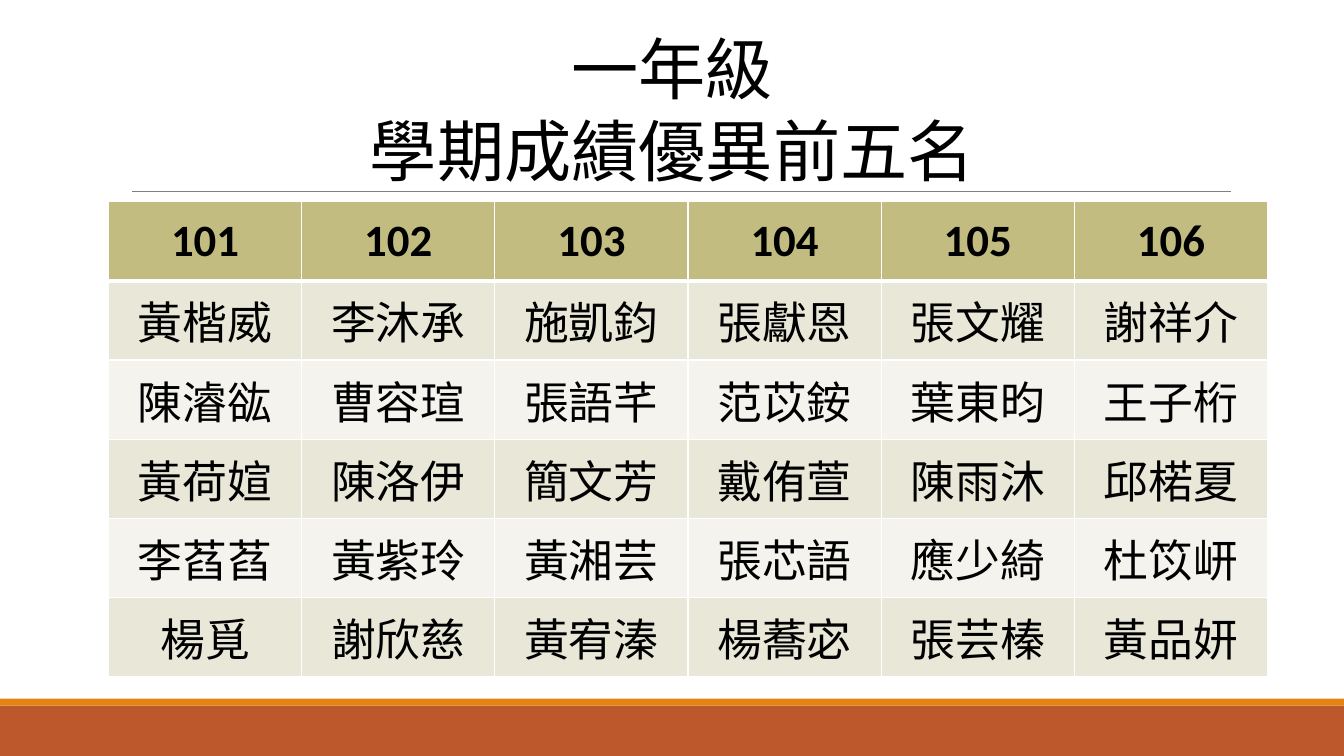
from pptx import Presentation
from pptx.dml.color import RGBColor
from pptx.enum.shapes import MSO_CONNECTOR as CONN, MSO_SHAPE as SHAPE
from pptx.enum.text import MSO_ANCHOR as ANCHOR, PP_ALIGN as ALIGN
from pptx.oxml.ns import qn
from pptx.util import Pt
from lxml.etree import SubElement

W, H = 960, 540
LATIN, CJK_JP, CJK_SC = "Calibri", "Noto Sans CJK JP", "Noto Sans CJK SC"

TITLE = ["一年級", "學期成績優異前五名"]
ROWS = [
    ["101", "102", "103", "104", "105", "106"],
    ["黃楷威", "李沐承", "施凱鈞", "張獻恩", "張文耀", "謝祥介"],
    ["陳濬谹", "曹容瑄", "張語芊", "范苡銨", "葉東昀", "王子桁"],
    ["黃荷媗", "陳洛伊", "簡文芳", "戴侑萱", "陳雨沐", "邱楉夏"],
    ["李萏萏", "黃紫玲", "黃湘芸", "張芯語", "應少綺", "杜笖岍"],
    ["楊覓", "謝欣慈", "黃宥溱", "楊蕎宓", "張芸榛", "黃品妍"],
]
HEADER_FILL, BAND_FILLS = "C2BC80", ["F4F3ED", "E9E7D8"]
HEADER_FMT = {"name": LATIN, "size": Pt(32), "bold": True}
NAME_FMT = {"name": CJK_SC, "size": Pt(32), "bold": False}
TITLE_FMT = {"name": CJK_JP, "size": Pt(48)}


def color(hex_str):
    return RGBColor.from_string(hex_str)


def add_run(p, text, fmt):
    p.alignment = ALIGN.CENTER
    r = p.add_run()
    r.text = text
    for key, value in fmt.items():
        setattr(r.font, key, value)
    r.font.color.rgb = color("000000")
    # East Asian typeface
    SubElement(r.font._element, qn("a:ea"), typeface=fmt["name"])


def add_band(s, top, height, fill):
    sp = s.shapes.add_shape(SHAPE.RECTANGLE, 0, Pt(top), Pt(W), Pt(height))
    sp.shadow.inherit = False
    sp.fill.solid()
    sp.fill.fore_color.rgb = color(fill)
    sp.line.fill.background()


def add_rule(s, x1, x2, y):
    ln = s.shapes.add_connector(CONN.STRAIGHT, Pt(x1), Pt(y), Pt(x2), Pt(y))
    ln.line.color.rgb = color("808080")
    ln.line.width = Pt(0.5)
    SubElement(ln._element.spPr, qn("a:effectLst"))


def add_title(s, lines):
    tf = s.shapes.add_textbox(Pt(255), Pt(15), Pt(450.5), Pt(124)).text_frame
    tf.word_wrap = False
    for i, text in enumerate(lines):
        p = tf.add_paragraph() if i else tf.paragraphs[0]
        p.line_spacing = Pt(58.5)
        add_run(p, text, TITLE_FMT)


def set_borders(cell, widths):
    tc_pr = cell._tc.get_or_add_tcPr()
    for i, (side, width) in enumerate(widths.items()):
        ln = SubElement(tc_pr, qn(f"a:ln{side}"), w=str(Pt(width)))
        fill = SubElement(ln, qn("a:solidFill"))
        SubElement(fill, qn("a:srgbClr"), val="FFFFFF")
        tc_pr.insert(i, ln)  # borders come before the fill


def add_score_table(s, rows):
    n_rows, n_cols = len(rows), len(rows[0])
    table = s.shapes.add_table(n_rows, n_cols, Pt(77.5), Pt(144),
                               Pt(138 * n_cols), Pt(56.6 * n_rows)).table
    for i, row in enumerate(rows):
        for j, text in enumerate(row):
            cell = table.cell(i, j)
            cell.vertical_anchor = ANCHOR.MIDDLE
            cell.fill.solid()
            cell.fill.fore_color.rgb = color(BAND_FILLS[i % 2] if i else HEADER_FILL)
            if i:
                for side in ("left", "top", "right", "bottom"):
                    setattr(cell, f"margin_{side}", Pt(0.75))
            set_borders(cell, {"L": 1, "R": 1, "T": 3 if i == 1 else 1,
                               "B": 1 if i else 3})
            add_run(cell.text_frame.paragraphs[0], text,
                    NAME_FMT if i else HEADER_FMT)


def main():
    prs = Presentation()
    prs.slide_width, prs.slide_height = Pt(W), Pt(H)
    s = prs.slides.add_slide(prs.slide_layouts[6])

    # Footer bands
    add_band(s, 504, 36, "BD582C")
    add_band(s, 499, 5, "E48312")

    # Title, rule and table
    add_rule(s, 94.5, 879, 136.75)
    add_score_table(s, ROWS)
    add_title(s, TITLE)

    prs.save("out.pptx")


if __name__ == "__main__":
    main()
